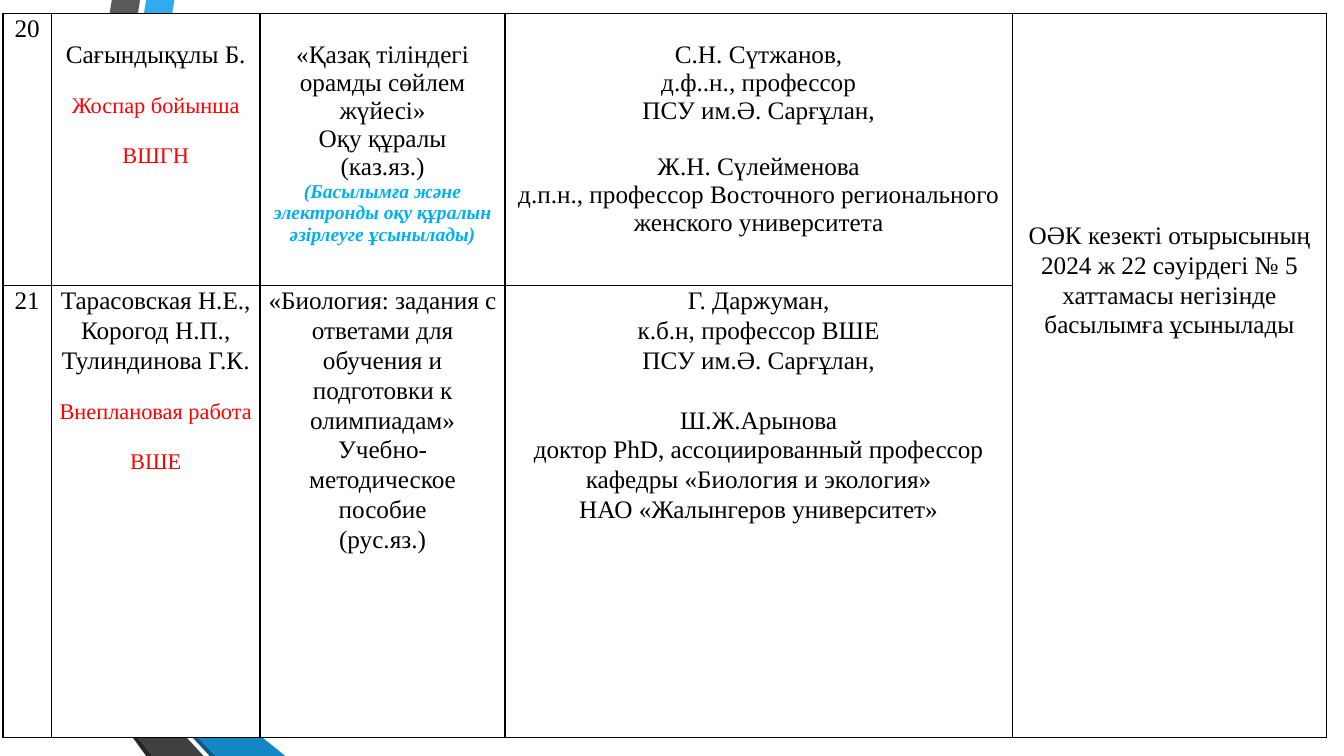
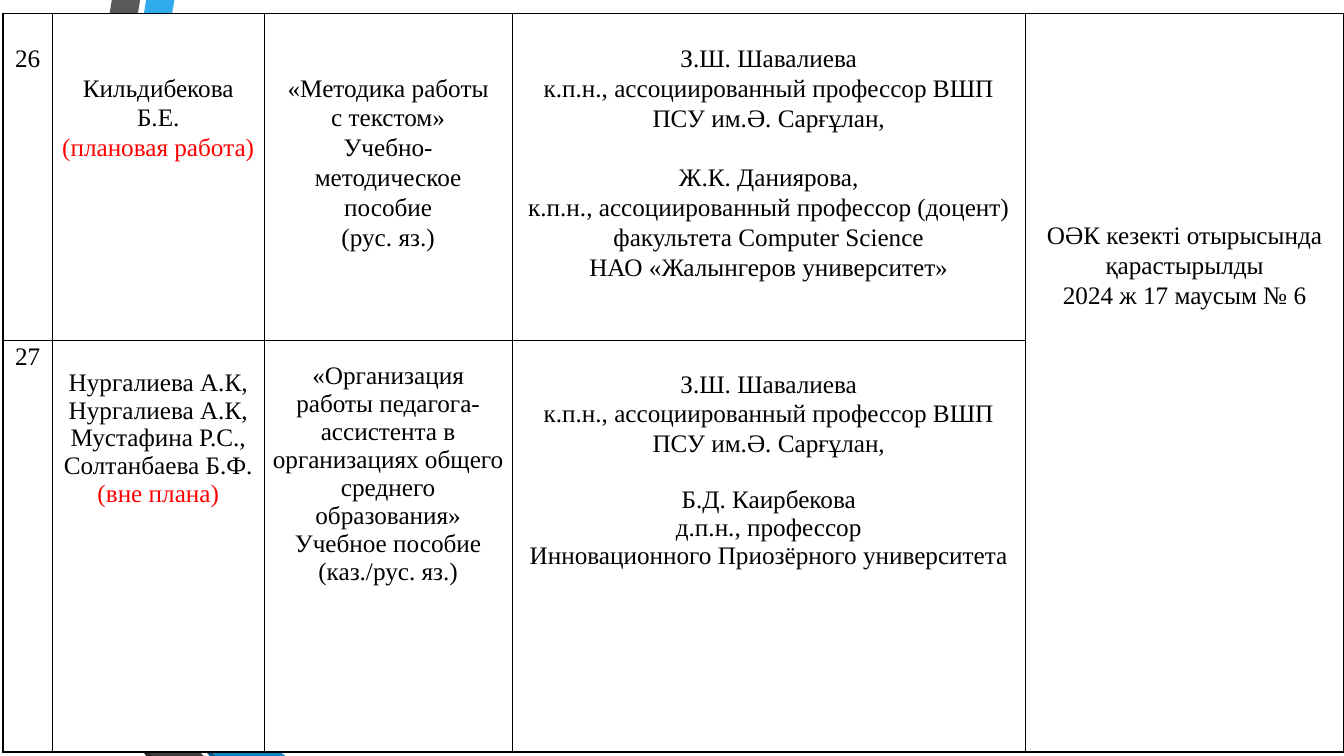
from dataclasses import dataclass

from lxml import etree
from pptx import Presentation
from pptx.dml.color import RGBColor
from pptx.enum.text import MSO_ANCHOR, PP_ALIGN
from pptx.oxml.ns import qn
from pptx.util import Inches, Pt

CENTER = PP_ALIGN.CENTER
TOP = MSO_ANCHOR.TOP

FONT = "Times New Roman"
BLACK, WHITE, RED, SKY = "000000", "FFFFFF", "FF0000", "00B0F0"
LOOSE = 1.07
LEFT_EDGE, TOP_EDGE = 0.03, 0.13
LINE_18, LOOSE_18, LINE_16, LINE_14 = 20, 21.3, 17.7, 15.5  # line heights in points
VERDICT_TOP = LINE_18 + 6 * LOOSE_18

RIBBONS = [
    ("30ACEC", [(0.5, 5.78), (0.77, 5.83), (1.73, 0), (1.45, 0)]),
    ("595959", [(1.39, 0), (1.11, 0), (0.16, 5.73), (0.44, 5.77)]),
    ("262626", [(0.16, 5.73), (1.45, 7.5), (1.51, 7.5)]),
    ("0C5A82", [(0.5, 5.79), (2.08, 7.5), (2.14, 7.5)]),
    ("1287C3", [(0.5, 5.79), (2.14, 7.5), (2.83, 7.5), (0.77, 5.83), (0.5, 5.78)]),
    ("404040", [(2.02, 7.5), (0.48, 5.83), (0.43, 5.77), (0.16, 5.73), (1.51, 7.5)]),
]


@dataclass
class Line:
    text: str
    gap: float = 0
    size: int = 18
    color: str = BLACK
    emphasis: bool = False
    spacing: float = 0


@dataclass
class Entry:
    """Cell content: lines of text, the space above them, their line spacing."""
    lines: list
    top: float = 0
    spacing: float = LOOSE


HOME_UNIVERSITY = "ПСУ им.Ә. Сарғұлан,"
PARTNER_UNIVERSITY = "НАО «Жалынгеров университет»"

FIRST_REVIEWER = [
    "З.Ш. Шавалиева",
    "к.п.н., ассоциированный профессор ВШП",
    HOME_UNIVERSITY,
]

APRIL_ROWS = [
    [
        Entry(["20"]),
        Entry([
            "Сағындықұлы Б.",
            Line("Жоспар бойынша", LINE_16, 16, RED),
            Line("ВШГН", LINE_16, 16, RED),
        ], LINE_18, 1),
        Entry([
            "«Қазақ тіліндегі орамды сөйлем жүйесі»",
            "Оқу құралы",
            "(каз.яз.)",
            Line("(Басылымға және электронды оқу құралын әзірлеуге ұсынылады)",
                 size=14, color=SKY, emphasis=True),
        ], LINE_18, 1),
        Entry([
            "С.Н. Сүтжанов,",
            "д.ф..н., профессор",
            HOME_UNIVERSITY,
            Line("Ж.Н. Сүлейменова", LINE_18),
            "д.п.н., профессор Восточного регионального женского университета",
        ], LINE_18, 1),
        Entry([
            "ОӘК кезекті отырысының 2024 ж 22 сәуірдегі № 5 "
            "хаттамасы негізінде басылымға ұсынылады",
        ], VERDICT_TOP),
    ],
    [
        Entry(["21"]),
        Entry([
            "Тарасовская Н.Е.,",
            "Корогод Н.П.,",
            "Тулиндинова Г.К.",
            Line("Внеплановая работа", LINE_16, 16, RED, spacing=1),
            Line("ВШЕ", LINE_16, 16, RED, spacing=1),
        ]),
        Entry([
            "«Биология: задания с ответами для обучения и подготовки к олимпиадам»",
            "Учебно-методическое пособие",
            "(рус.яз.)",
        ]),
        Entry([
            "Г. Даржуман,",
            "к.б.н, профессор ВШЕ",
            HOME_UNIVERSITY,
            Line("Ш.Ж.Арынова", LOOSE_18),
            "доктор PhD, ассоциированный профессор",
            "кафедры «Биология и экология»",
            PARTNER_UNIVERSITY,
        ]),
    ],
]

JUNE_ROWS = [
    [
        Entry(["26"], LOOSE_18),
        Entry([
            "Кильдибекова Б.Е.",
            Line("(плановая работа)", color=RED),
        ], 2 * LOOSE_18),
        Entry([
            "«Методика работы",
            "с текстом»",
            "Учебно-методическое пособие",
            "(рус. яз.)",
        ], 2 * LOOSE_18),
        Entry([
            *FIRST_REVIEWER,
            Line("Ж.К. Даниярова,", LOOSE_18),
            "к.п.н., ассоциированный профессор (доцент)",
            "факультета Computer Science",
            PARTNER_UNIVERSITY,
        ], LOOSE_18),
        Entry([
            "ОӘК кезекті отырысында қарастырылды",
            "2024 ж 17 маусым № 6",
        ], VERDICT_TOP),
    ],
    [
        Entry(["27"]),
        Entry([
            "Нургалиева А.К,",
            "Нургалиева А.К,",
            "Мустафина Р.С.,",
            "Солтанбаева Б.Ф.",
            Line("(вне плана)", color=RED),
        ], LINE_18, 1),
        Entry([
            "«Организация работы педагога-ассистента в организациях "
            "общего среднего образования»",
            "Учебное пособие",
            "(каз./рус. яз.)",
        ], LINE_14, 1),
        Entry([
            *FIRST_REVIEWER,
            Line("Б.Д. Каирбекова", LINE_18, spacing=1),
            Line("д.п.н., профессор", spacing=1),
            Line("Инновационного Приозёрного университета", spacing=1),
        ], LINE_18),
    ],
]

TABLES = [
    ([0.48, 2.07, 2.43, 5.03, 3.12], [2.7, 4.49], APRIL_ROWS),
    ([0.49, 2.1, 2.46, 5.09, 3.16], [3.25, 4.08], JUNE_ROWS),
]


def rgb(value):
    return RGBColor.from_string(value)


def add_ribbon(slide, color, points):
    start, *rest = [(Inches(x), Inches(y)) for x, y in points]
    builder = slide.shapes.build_freeform(*start)
    builder.add_line_segments(rest, close=True)
    sp = builder.convert_to_shape()
    sp.shadow.inherit = False
    sp.fill.solid()
    sp.fill.fore_color.rgb = rgb(color)
    sp.line.fill.background()
    return sp


def decorate_layout(layout, slide):
    """Draw the ribbons on a slide, then move them to the layout all slides share."""
    for ph in list(layout.placeholders):
        layout.shapes.element.remove(ph.element)
    ribbons = [add_ribbon(slide, color, points) for color, points in RIBBONS]
    for sp in ribbons:
        layout.shapes.element.append(sp.element)


def add_borders(cell):
    tc_pr = cell._tc.get_or_add_tcPr()
    for side in ("a:lnL", "a:lnR", "a:lnT", "a:lnB"):
        ln = etree.SubElement(tc_pr, qn(side), w=str(Pt(1)))
        fill = etree.SubElement(ln, qn("a:solidFill"))
        etree.SubElement(fill, qn("a:srgbClr"), val=BLACK)


def write_entry(cell, entry):
    cell.margin_top = Pt(entry.top)
    tf = cell.text_frame
    for i, item in enumerate(entry.lines):
        line = Line(item) if isinstance(item, str) else item
        p = tf.paragraphs[0] if i == 0 else tf.add_paragraph()
        p.text = line.text
        p.alignment = CENTER
        p.line_spacing = line.spacing or entry.spacing
        p.space_before = Pt(line.gap)
        p.font.name = FONT
        p.font.size = Pt(line.size)
        p.font.color.rgb = rgb(line.color)
        p.font.bold = p.font.italic = line.emphasis


def add_works_table(slide, widths, heights, rows):
    """Table of works whose last column is one verdict for all rows."""
    table = slide.shapes.add_table(
        len(heights), len(widths), Inches(LEFT_EDGE), Inches(TOP_EDGE),
        Inches(sum(widths)), Inches(sum(heights))).table
    table.first_row = table.horz_banding = False
    for column, width in zip(table.columns, widths):
        column.width = Inches(width)
    for row, height in zip(table.rows, heights):
        row.height = Inches(height)

    last = len(widths) - 1
    table.cell(0, last).merge(table.cell(len(heights) - 1, last))
    for cell in table.iter_cells():
        add_borders(cell)
        cell.fill.solid()
        cell.fill.fore_color.rgb = rgb(WHITE)
        cell.vertical_anchor = TOP
        cell.margin_left = cell.margin_right = Inches(0.07)
        cell.margin_top = cell.margin_bottom = 0
    for r, entries in enumerate(rows):
        for c, entry in enumerate(entries):
            write_entry(table.cell(r, c), entry)
        number = table.cell(r, 0)
        number.margin_left = number.margin_right = Inches(0.03)


def main():
    prs = Presentation()
    prs.slide_width, prs.slide_height = Inches(13.33), Inches(7.5)
    layout = prs.slide_layouts[6]
    slides = [prs.slides.add_slide(layout) for _ in TABLES]
    decorate_layout(layout, slides[0])
    for slide, (widths, heights, rows) in zip(slides, TABLES):
        add_works_table(slide, widths, heights, rows)
    prs.save("out.pptx")


if __name__ == "__main__":
    main()
